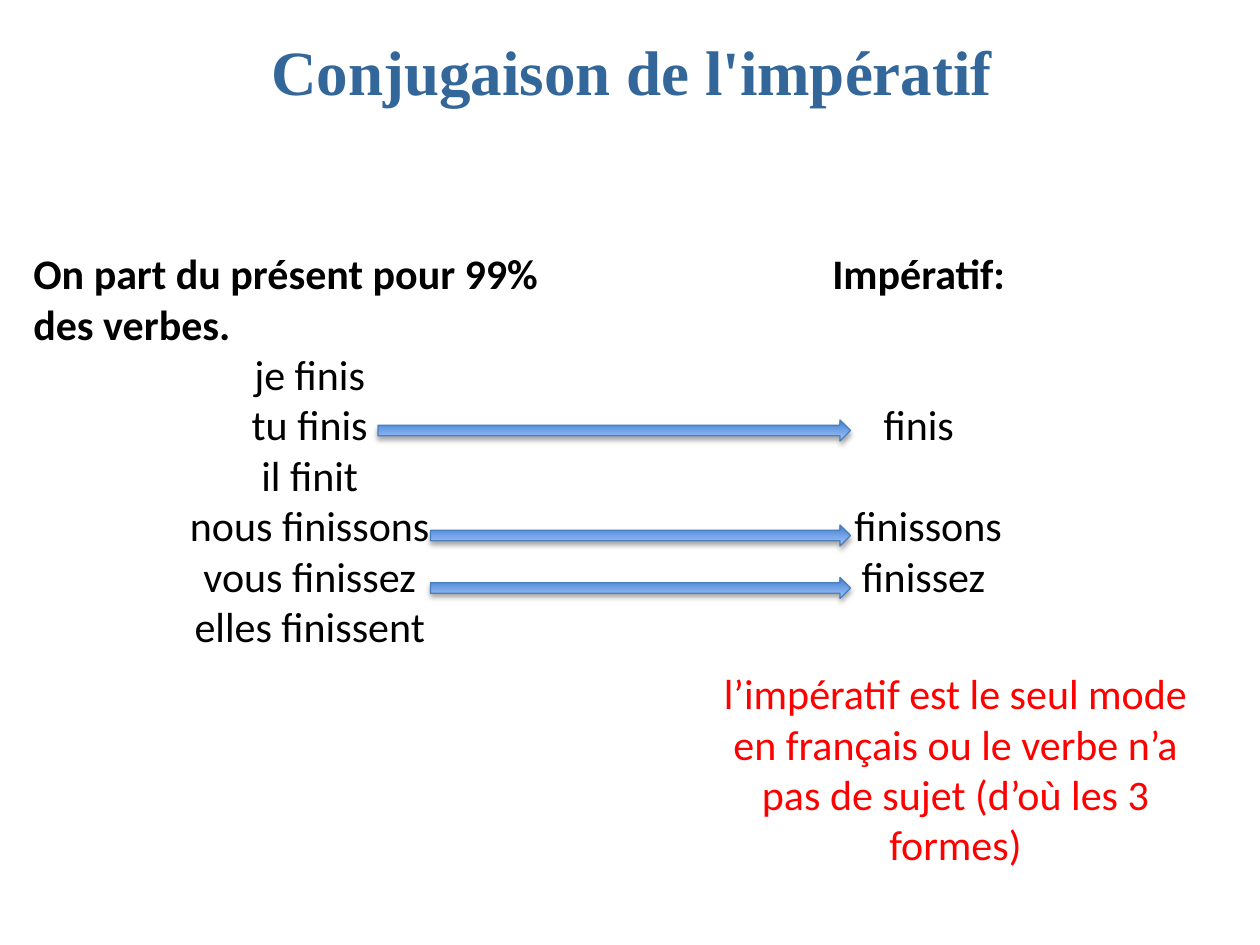
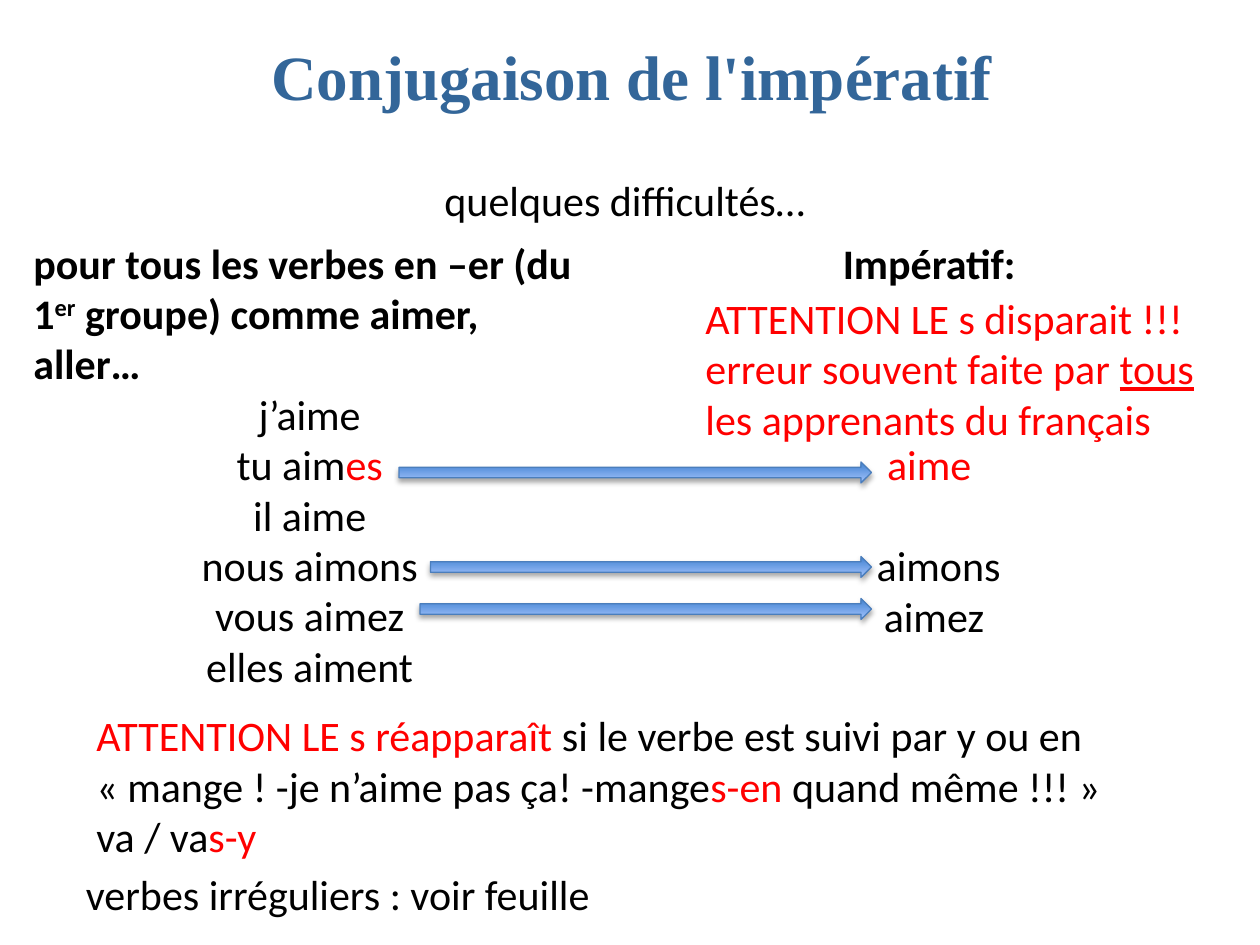
"""Build two slides on the conjugation of the French imperative."""
from lxml.etree import SubElement
from pptx import Presentation
from pptx.dml.color import RGBColor
from pptx.enum.shapes import MSO_SHAPE as Shape
from pptx.enum.text import MSO_ANCHOR as Anchor, PP_ALIGN as Align
from pptx.oxml.ns import qn
from pptx.util import Pt

BLACK, RED, TITLE_BLUE = "000000", "FF0000", "336699"
ARROW_DARK, ARROW_LIGHT, ARROW_LINE = "3F80CE", "A4C4FF", "4B7EBC"
LINE = 28.8
ARROW_HEIGHT = 12


def rgb(value):
    return RGBColor.from_string(value)


def add_text(slide, box, lines, align=Align.LEFT, color=BLACK, bold=False,
             name="Calibri", size=24, gap=0, indent=0, wrap=True, frame=None):
    if frame is None:
        frame = slide.shapes.add_textbox(*map(Pt, box)).text_frame
        frame.word_wrap = wrap
        frame.vertical_anchor = Anchor.TOP
        paragraph = frame.paragraphs[0]
    else:
        paragraph = frame.add_paragraph()
    for index, line in enumerate(lines):
        if index:
            paragraph = frame.add_paragraph()
        paragraph.alignment = align
        if gap:
            paragraph.space_before = Pt(gap)
        if indent:
            properties = paragraph._p.get_or_add_pPr()
            properties.set("marL", str(Pt(indent)))
            properties.set("indent", "0")
        font = paragraph.font
        font.name, font.size, font.bold = name, Pt(size), bold
        font.color.rgb = rgb(color)
        for part in [line] if isinstance(line, str) else line:
            text, style = (part, None) if isinstance(part, str) else part
            run = paragraph.add_run()
            run.text = text
            if style == "underline":
                run.font.underline = True
            elif style == "superscript":
                run._r.get_or_add_rPr().set("baseline", "30000")
            elif style:
                run.font.color.rgb = rgb(style)
    return frame


lessons = [
    {
        "title": (102, 15, 518, 104),
        "present": (12, 138, 330, 240),
        "rule": ["On part du présent pour 99% des verbes."],
        "verbs": ["je finis", "tu finis", "il finit", "nous finissons",
                  "vous finissez", "elles finissent"],
        "imperative": (360, 138, 330, 211),
        "forms": [("finis", BLACK, 2, 0), ("finissons", BLACK, 1, 10.8),
                  ("finissez", BLACK, 0, 5.4)],
        "arrows": [(216, 240, 270), (246, 300, 240), (246, 330, 240)],
        "notes": [
            ((402, 378, 288, 124), Align.CENTER, RED,
             ["l’impératif est le seul mode en français ou le verbe n’a "
              "pas de sujet (d’où les 3 formes)"]),
        ],
    },
    {
        "title": (102, 18, 518, 84),
        "present": (12, 132, 330, 269),
        "rule": [["pour tous les verbes en –er (du 1", ("er", "superscript"),
                  " groupe) comme aimer, aller…"]],
        "verbs": ["j’aime", ["tu aim", ("es", RED)], "il aime", "nous aimons",
                  "vous aimez", "elles aiment"],
        "imperative": (366, 132, 330, 240),
        "forms": [("aime", RED, 3, 0), ("aimons", BLACK, 1, 10.8),
                  ("aimez", BLACK, 0, 5.4)],
        "arrows": [(228, 264, 270), (246, 318, 252), (240, 342, 258)],
        "notes": [
            ((168, 96, 378, 36), Align.CENTER, BLACK, ["quelques difficultés…"]),
            ((396, 163.5, 300, 94), Align.LEFT, RED,
             [["ATTENTION LE s disparait !!! erreur souvent faite par ",
               ("tous ", "underline"), "les apprenants du français"]]),
            ((48, 402, 648, 94), Align.LEFT, BLACK,
             [[("ATTENTION LE s réapparaît ", RED),
               "si le verbe est suivi par y ou en"],
              ["« mange ! -je n’aime pas ça! -mange", ("s-en ", RED),
               "quand même !!! »"],
              ["va / va", ("s-y", RED)]]),
            ((42, 493, 648, 36), Align.LEFT, BLACK,
             ["verbes irréguliers : voir feuille"]),
        ],
    },
]

presentation = Presentation()
presentation.slide_width, presentation.slide_height = Pt(720), Pt(540)

for lesson in lessons:
    slide = presentation.slides.add_slide(presentation.slide_layouts[6])
    add_text(slide, lesson["title"], ["Conjugaison de l'impératif"], Align.CENTER,
             TITLE_BLUE, True, "Times New Roman", 36, wrap=False)

    present = add_text(slide, lesson["present"], lesson["rule"], bold=True)
    add_text(slide, None, lesson["verbs"], Align.CENTER, frame=present)

    for left, top, width in lesson["arrows"]:
        arrow = slide.shapes.add_shape(
            Shape.RIGHT_ARROW, Pt(left), Pt(top), Pt(width), Pt(ARROW_HEIGHT))
        arrow._element.spPr.get_or_add_xfrm().set("flipV", "1")
        arrow.fill.gradient()
        arrow.fill.gradient_angle = 90
        for stop, color in zip(arrow.fill.gradient_stops, (ARROW_DARK, ARROW_LIGHT)):
            stop.color.rgb = rgb(color)
        arrow.line.color.rgb = rgb(ARROW_LINE)
        arrow.line.width = Pt(0.75)
        arrow.shadow.inherit = False
        effects = arrow._element.spPr.find(qn("a:effectLst"))
        shadow = SubElement(effects, qn("a:outerShdw"), blurRad=str(Pt(3.1)),
                            dist=str(Pt(1.8)), dir="5400000", rotWithShape="0")
        shadow_color = SubElement(shadow, qn("a:srgbClr"), val=BLACK)
        SubElement(shadow_color, qn("a:alpha"), val="35000")

    imperative = add_text(slide, lesson["imperative"], ["Impératif:"],
                          Align.CENTER, bold=True)
    for form, color, skipped, indent in lesson["forms"]:
        add_text(slide, None, [form], Align.CENTER, color, gap=skipped * LINE,
                 indent=indent, frame=imperative)

    for box, align, color, lines in lesson["notes"]:
        add_text(slide, box, lines, align, color)

presentation.save("out.pptx")
